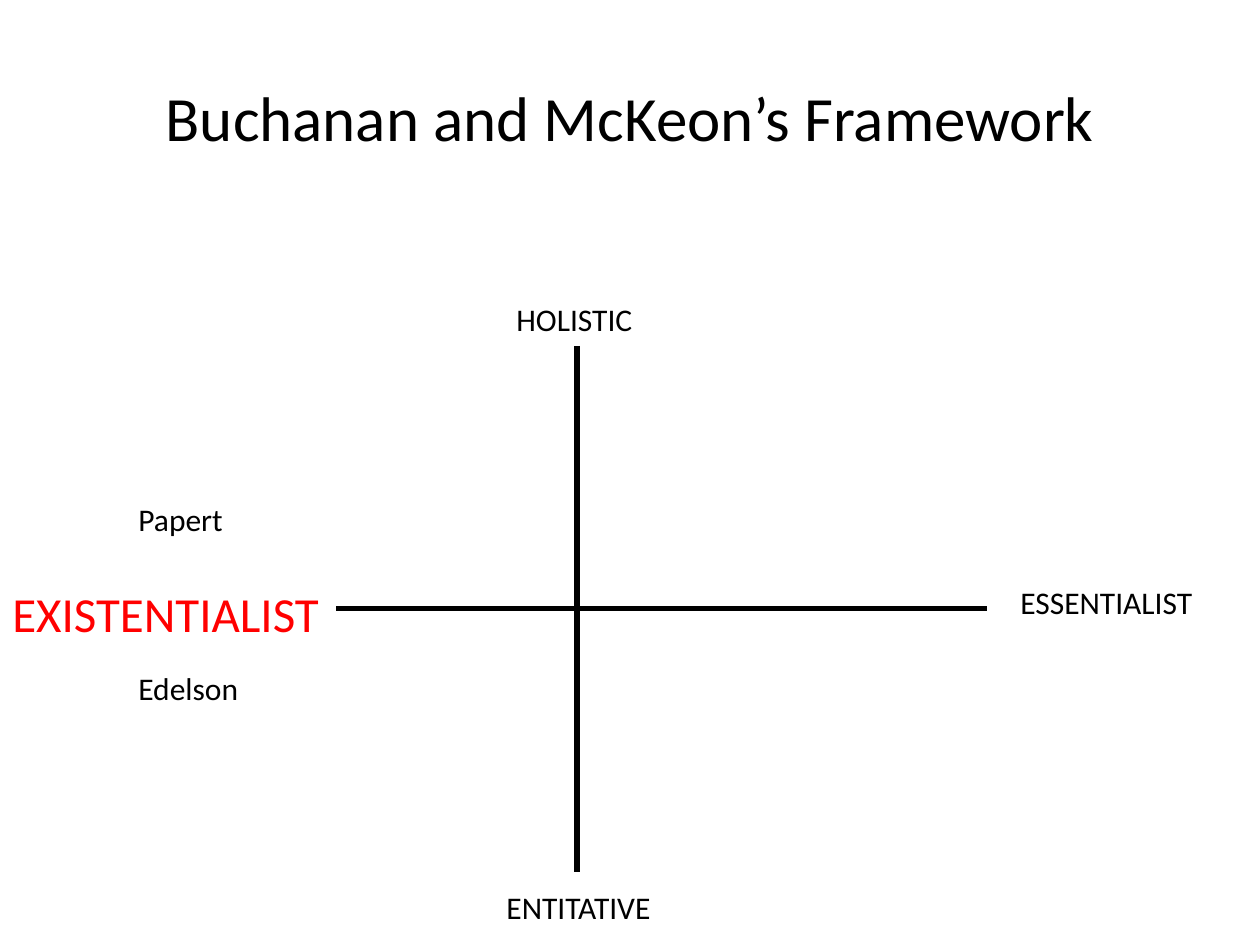
from dataclasses import dataclass

from lxml import etree
from pptx import Presentation
from pptx.dml.color import RGBColor
from pptx.enum.shapes import MSO_CONNECTOR
from pptx.enum.text import MSO_ANCHOR, MSO_AUTO_SIZE, PP_ALIGN
from pptx.oxml.ns import qn
from pptx.util import Cm, Pt

STRAIGHT = MSO_CONNECTOR.STRAIGHT
MIDDLE, TOP = MSO_ANCHOR.MIDDLE, MSO_ANCHOR.TOP
CENTER, LEFT = PP_ALIGN.CENTER, PP_ALIGN.LEFT
FIT, FIXED = MSO_AUTO_SIZE.SHAPE_TO_FIT_TEXT, MSO_AUTO_SIZE.NONE


@dataclass(frozen=True)
class Theme:
    font: str = "Calibri"
    ink: RGBColor = RGBColor(0, 0, 0)
    accent: RGBColor = RGBColor(255, 0, 0)
    title: Pt = Pt(36)
    emphasis: Pt = Pt(28)
    label: Pt = Pt(18)
    axis: Pt = Pt(3)


THEME = Theme()


def set_format(target, values):
    for name, value in values.items():
        setattr(target, name, value)


def add_text(slide, box, wording, size=THEME.label, color=THEME.ink,
             align=LEFT, anchor=TOP, auto_size=FIT):
    frame = slide.shapes.add_textbox(*map(Cm, box)).text_frame
    set_format(frame, {"word_wrap": True, "auto_size": auto_size, "vertical_anchor": anchor})
    paragraph = frame.paragraphs[0]
    paragraph.alignment = align
    run = paragraph.add_run()
    run.text = wording
    set_format(run.font, {"name": THEME.font, "size": size})
    run.font.color.rgb = color


def add_axis(slide, start, end):
    axis = slide.shapes.add_connector(STRAIGHT, *map(Cm, (*start, *end)))
    axis.line.color.rgb = THEME.ink
    axis.line.width = THEME.axis
    etree.SubElement(axis._element.spPr, qn("a:effectLst"))


def add_title(slide, box):
    add_text(slide, box, "Buchanan and McKeon’s Framework", THEME.title,
             align=CENTER, anchor=MIDDLE, auto_size=FIXED)


def add_framework(slide, box):
    left, top, width, height = box
    center_x, center_y = left + 11.63, top + 6.35
    reach = 5.3
    label_height = 1.02
    end_label_top = center_y - 0.64

    add_axis(slide, (center_x, center_y - reach), (center_x, center_y + reach))
    add_axis(slide, (left + 6.78, center_y), (left + 19.89, center_y))

    labels = (
        ("ENTITATIVE", left + 9.96, top + height - label_height, 3.6),
        ("HOLISTIC", left + 10.16, top, 3.6),
        ("ESSENTIALIST", left + 20.32, end_label_top, 4.02),
        ("Papert", left + 2.54, center_y - 2.31, 2.54),
        ("Edelson", left + 2.54, center_y + 1.09, 2.54),
    )
    for wording, x, y, label_width in labels:
        add_text(slide, (x, y, label_width, label_height), wording)
    add_text(slide, (left, end_label_top, 6.99, 1.45), "EXISTENTIALIST",
             THEME.emphasis, THEME.accent)


def main():
    deck = Presentation()
    set_format(deck, {"slide_width": Cm(25.4), "slide_height": Cm(19.05)})
    slide = deck.slides.add_slide(deck.slide_layouts[6])
    add_framework(slide, (0, 5.92, 25.4, 12.88))
    add_title(slide, (0, 0.76, 25.4, 3.18))
    deck.save("out.pptx")


if __name__ == "__main__":
    main()
